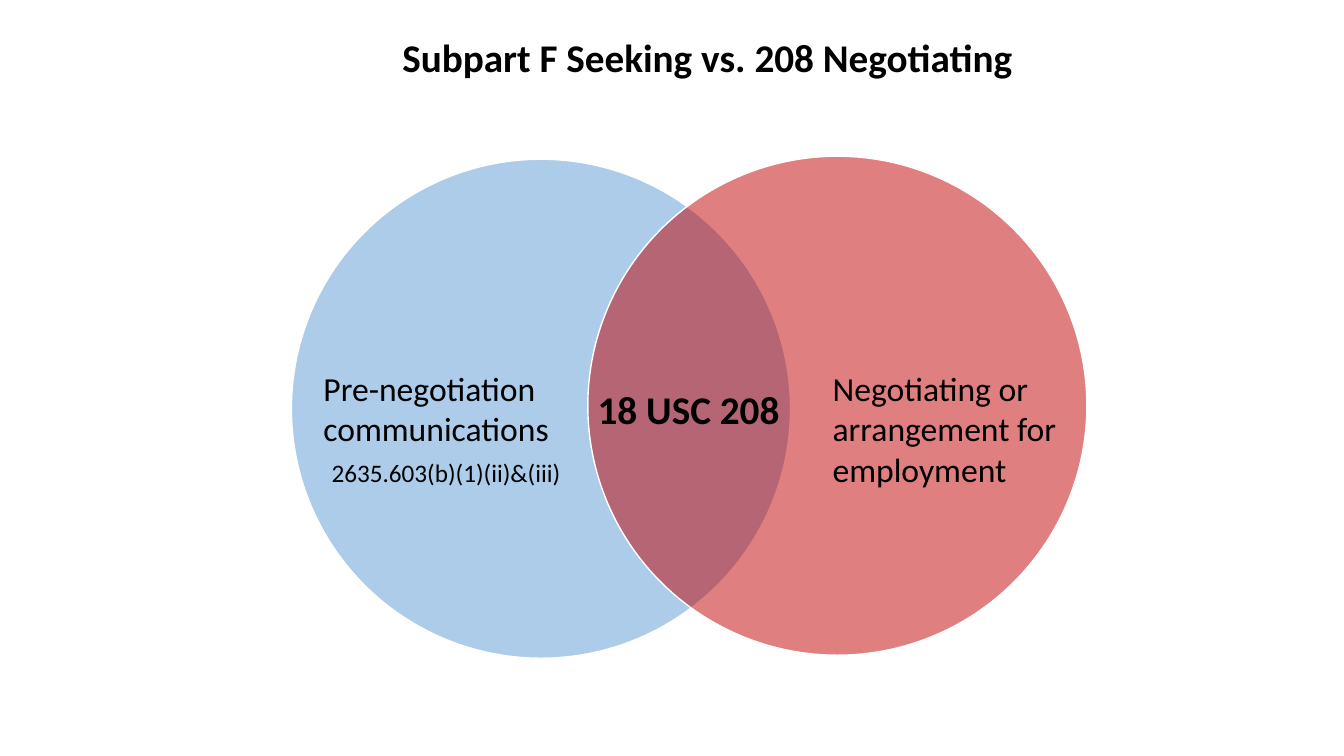
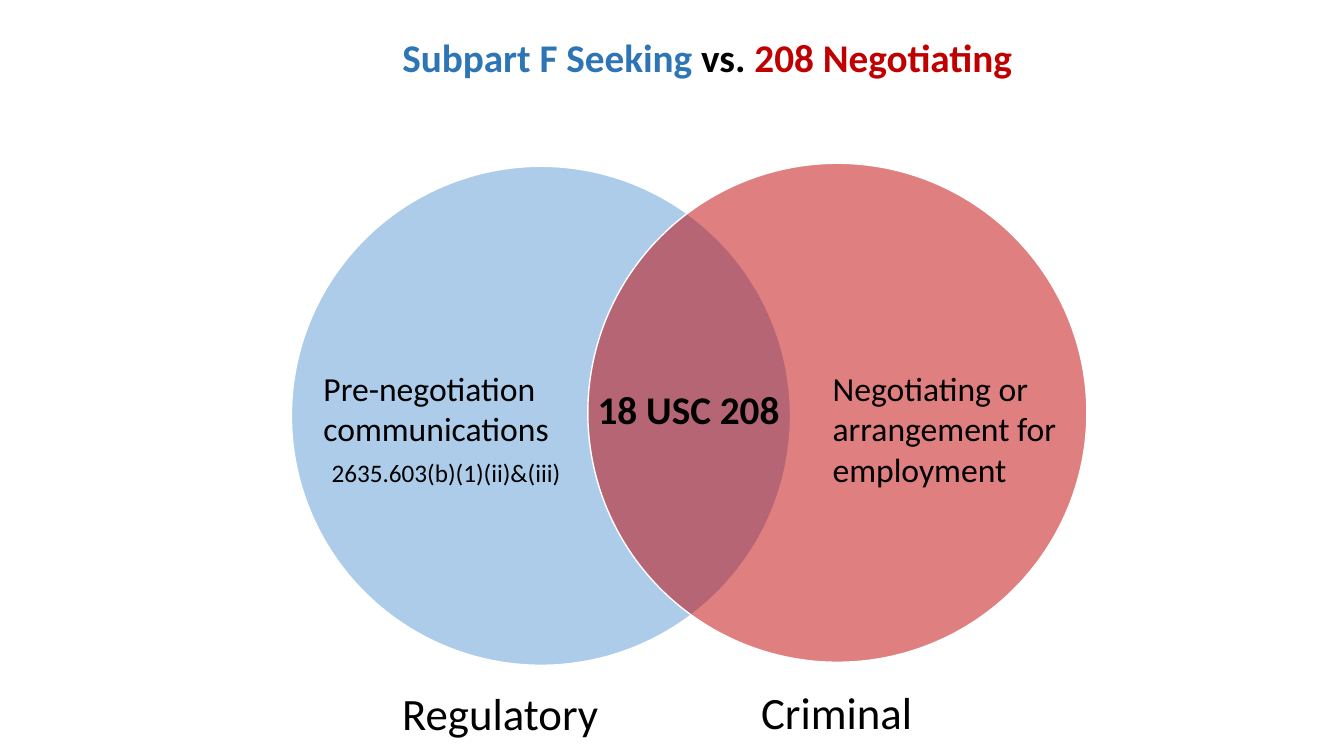
from lxml.etree import SubElement
from pptx import Presentation
from pptx.dml.color import RGBColor
from pptx.enum.shapes import MSO_SHAPE
from pptx.enum.text import MSO_ANCHOR, PP_ALIGN
from pptx.oxml.ns import qn
from pptx.util import Pt

PX = 9144  # EMU per px, 100 px to the inch
COLORS = {
    "text": "000000",
    "outline": "FFFFFF",
    "regulatory": "5B9BD5",
    "regulatory_title": "2E75B6",
    "criminal": "C00000",
}
FONT = "Calibri"
TITLE_ONLY = 5
CIRCLE_SIZE = 495


def rgb(name):
    return RGBColor.from_string(COLORS[name])


def write_text(frame, paragraphs, size, bold=False, wrap=False):
    """Fill a frame; each paragraph is a list of (text, colour name) spans."""
    frame.word_wrap = wrap
    frame.vertical_anchor = MSO_ANCHOR.TOP
    for index, spans in enumerate(paragraphs):
        para = frame.add_paragraph() if index else frame.paragraphs[0]
        para.alignment = PP_ALIGN.LEFT
        for text, color in spans:
            span = para.add_run()
            span.text = text
            span.font.name = FONT
            span.font.size = Pt(size)
            span.font.bold = bold
            span.font.color.rgb = rgb(color)


class VennDeck:
    def __init__(self):
        self.deck = Presentation()
        self.deck.slide_width = 1333 * PX
        self.deck.slide_height = 750 * PX
        self.page = None

    def add_page(self):
        self.page = self.deck.slides.add_slide(self.deck.slide_layouts[TITLE_ONLY])

    def title(self, spans):
        box = self.page.shapes.title
        box.left, box.top, box.width, box.height = (
            length * PX for length in (389, 28, 633, 57))
        write_text(box.text_frame, [spans], size=28, bold=True)

    def circle(self, left, top, color):
        """Add a half-transparent disc with a thin white outline."""
        disc = self.page.shapes.add_shape(
            MSO_SHAPE.OVAL, left * PX, top * PX, CIRCLE_SIZE * PX, CIRCLE_SIZE * PX)
        disc.shadow.inherit = False
        disc.fill.solid()
        disc.fill.fore_color.rgb = rgb(color)
        fill_color = disc.fill._xPr.find(qn("a:solidFill"))[0]
        SubElement(fill_color, qn("a:alpha"), val="50000")
        disc.line.color.rgb = rgb("outline")
        disc.line.width = Pt(1)

    def label(self, left, top, width, height, *lines, size=24, **style):
        box = self.page.shapes.add_textbox(
            left * PX, top * PX, width * PX, height * PX)
        write_text(box.text_frame, [[(line, "text")] for line in lines], size, **style)

    def venn(self, top):
        """Draw both circles, the right one slightly higher, and their labels."""
        self.circle(289, top + 3, "regulatory")
        self.circle(583, top, "criminal")
        self.label(311, 360, 246, 91, "Pre-negotiation", "communications")
        self.label(583, 377, 203, 57, "18 USC 208", size=28, bold=True)
        self.label(319, 449, 250, 40, "2635.603(b)(1)(ii)&(iii)", size=18)
        self.label(816, 360, 250, 131,
                   "Negotiating or arrangement for employment", wrap=True)

    def save(self):
        self.deck.save("out.pptx")


def main():
    show = VennDeck()

    show.add_page()
    show.title([("Subpart F Seeking vs. 208 Negotiating", "text")])
    show.venn(top=155)

    show.add_page()
    show.title([("Subpart F Seeking ", "regulatory_title"),
                ("vs. ", "text"),
                ("208 Negotiating", "criminal")])
    show.venn(top=162)
    show.label(389, 675, 217, 64, "Regulatory", size=32)
    show.label(745, 674, 172, 64, "Criminal", size=32)

    show.save()


if __name__ == "__main__":
    main()
